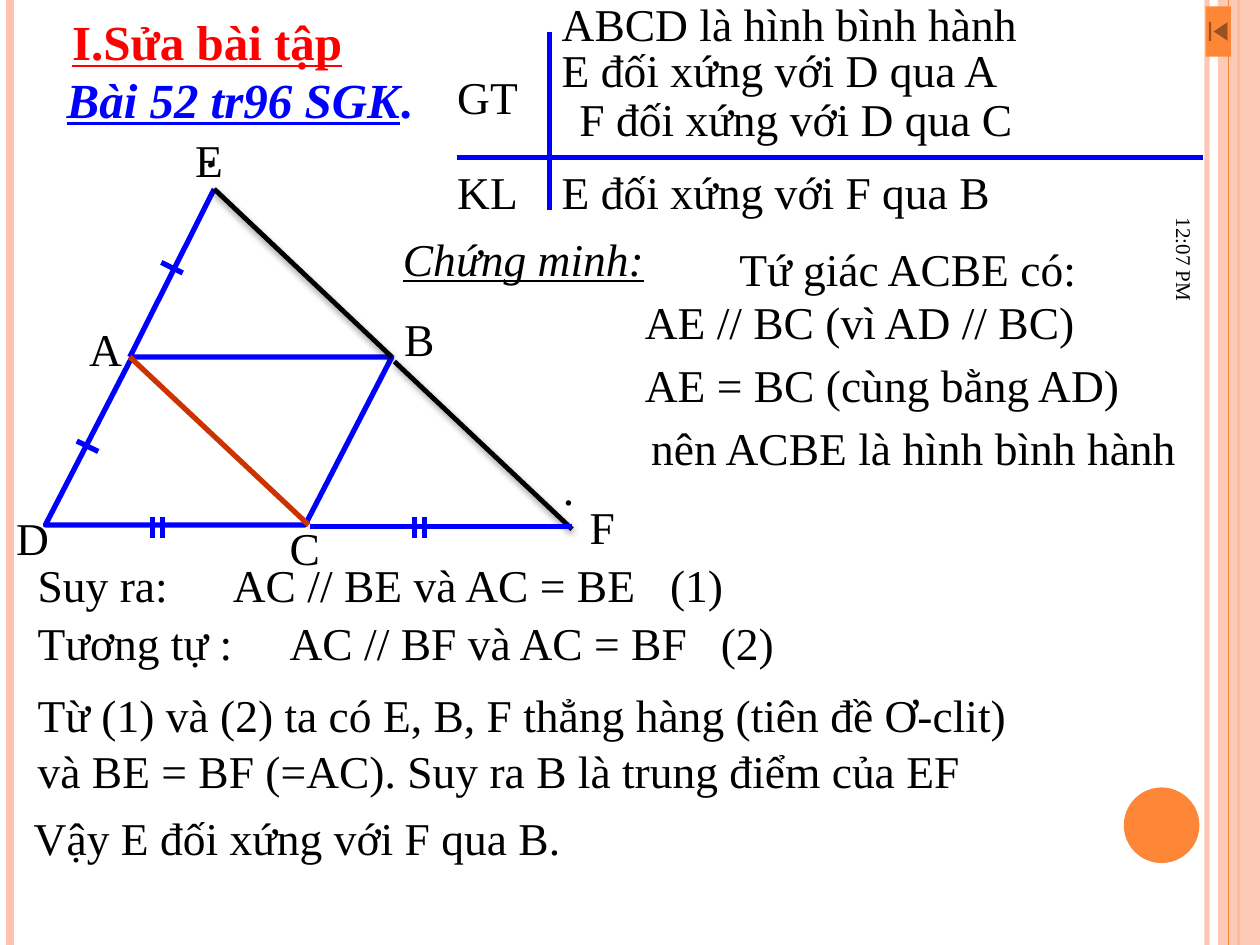
from dataclasses import dataclass

from lxml.etree import SubElement
from pptx import Presentation
from pptx.dml.color import RGBColor as Rgb
from pptx.enum.shapes import MSO_CONNECTOR as Connector, MSO_SHAPE as Shape
from pptx.enum.text import MSO_ANCHOR as Anchor, MSO_AUTO_SIZE as AutoSize, PP_ALIGN as Align
from pptx.oxml.ns import qn
from pptx.util import Pt


@dataclass(frozen=True)
class Theme:
    font: str = "Times New Roman"
    body: float = 26
    heading: float = 28
    clock: float = 12
    stroke: float = 3
    side: float = 2.75
    ink: str = "000000"
    blue: str = "0000FF"
    red: str = "FF0000"
    rust: str = "CC3300"
    orange: str = "FE8637"
    peach: str = "FEC3AE"


@dataclass(frozen=True)
class Box:
    left: float
    top: float
    width: float
    height: float


THEME = Theme()


def set_alpha(element, percent):
    color = next(element.iter(qn("a:srgbClr")))
    SubElement(color, qn("a:alpha"), val=str(percent * 1000))


def add_line(slide, box, start, end, color=THEME.blue, width=THEME.stroke, shadow=False):
    line = slide.shapes.add_connector(
        Connector.STRAIGHT,
        Pt(box.left + start[0]), Pt(box.top + start[1]),
        Pt(box.left + end[0]), Pt(box.top + end[1]))
    line.line.color.rgb = Rgb.from_string(color)
    line.line.width = Pt(width)
    effects = SubElement(line._element.spPr, qn("a:effectLst"))
    if shadow:
        outer = SubElement(effects, qn("a:outerShdw"), blurRad=str(Pt(4)),
                           dist=str(Pt(1.6)), dir="5400000", rotWithShape="0")
        SubElement(outer, qn("a:srgbClr"), val=THEME.ink)
        set_alpha(outer, 42)
    return line


def add_filled(slide, box, kind, x, y, width, height, color):
    shape = slide.shapes.add_shape(
        kind, Pt(box.left + x), Pt(box.top + y), Pt(width), Pt(height))
    shape.shadow.inherit = False
    shape.fill.solid()
    shape.fill.fore_color.rgb = Rgb.from_string(color)
    shape.line.fill.background()
    return shape


def style_font(font, size=THEME.body, color=THEME.ink, bold=False, italic=False, underline=False):
    font.name = THEME.font
    font.size = Pt(size)
    font.color.rgb = Rgb.from_string(color)
    font.bold, font.italic, font.underline = bold, italic, underline


def add_text(slide, box, x, y, width, text, height=38, spacing=None, tabs=(), **style):
    area = slide.shapes.add_textbox(
        Pt(box.left + x), Pt(box.top + y), Pt(width), Pt(height))
    frame = area.text_frame
    frame.word_wrap = True
    frame.auto_size = AutoSize.SHAPE_TO_FIT_TEXT
    frame.text = text
    for index, paragraph in enumerate(frame.paragraphs):
        style_font(paragraph.font, **style)
        if spacing:
            paragraph.line_spacing = spacing
        if index:
            paragraph.space_before = Pt(THEME.body / 2)
        if tabs:
            stops = SubElement(paragraph._p.get_or_add_pPr(), qn("a:tabLst"))
            stops.getparent().insert(0, stops)
            for stop in tabs:
                SubElement(stops, qn("a:tab"), pos=str(Pt(stop)), algn="l")
    return area


def draw_frame(slide, box):
    def rule(x, color, width):
        return add_line(slide, box, (x, 0), (x, box.height), color, width)

    set_alpha(rule(689.8, THEME.peach, 3)._element.spPr, 93)
    rule(5.8, THEME.peach, 4.5)
    rule(707.8, THEME.orange, 1.5)
    band = add_filled(slide, box, Shape.RECTANGLE, 696, 0, 24, box.height, THEME.peach)
    set_alpha(band._element.spPr, 87)
    rule(702, THEME.orange, 0.75)
    add_filled(slide, box, Shape.OVAL, 642.2, 450, 43.2, 43.2, THEME.orange)
    add_filled(slide, box, Shape.ACTION_BUTTON_BEGINNING, 689, 3.6, 14.4, 28.8, THEME.orange)
    clock = add_text(slide, box, 597.6, 85, 158.4, "12:07 PM", height=30, size=THEME.clock)
    clock.text_frame.auto_size = AutoSize.NONE
    clock.text_frame.vertical_anchor = Anchor.MIDDLE
    clock.text_frame.paragraphs[0].alignment = Align.RIGHT
    clock.rotation = 90


def draw_heading(slide, box):
    title = slide.shapes.title
    title.left, title.top = Pt(box.left + 3), Pt(box.top)
    title.width, title.height = Pt(190.8), Pt(41)
    frame = title.text_frame
    frame.text = "I.Sửa bài tập"
    frame.vertical_anchor = Anchor.TOP
    frame.auto_size = AutoSize.SHAPE_TO_FIT_TEXT
    frame.paragraphs[0].alignment = Align.LEFT
    style_font(frame.paragraphs[0].font, THEME.heading, THEME.red, bold=True, underline=True)

    exercise = add_text(slide, box, 0, 33, box.width, "Bài 52 tr96 SGK", height=41,
                        size=THEME.heading, color=THEME.blue, bold=True)
    paragraph = exercise.text_frame.paragraphs[0]
    paragraph.runs[0].font.italic = paragraph.runs[0].font.underline = True
    paragraph.add_run().text = "."


def draw_figure(slide, box):
    e, a, b, c, f = (122.4, 48), (74.2, 144), (223.9, 144), (176.4, 240), (326.9, 242.4)
    add_line(slide, box, (b[0] + 1.5, b[1] + 2.6), f, THEME.ink, THEME.side, shadow=True)
    add_line(slide, box, e, a)
    parallelogram = add_filled(slide, box, Shape.PARALLELOGRAM, 25.9, 144, 198, 96, THEME.blue)
    parallelogram.adjustments[0] = 0.516
    parallelogram.fill.background()
    parallelogram.line.color.rgb = Rgb.from_string(THEME.blue)
    parallelogram.line.width = Pt(THEME.stroke)
    add_line(slide, box, (177, 241), (f[0], 241))
    for x, y in ((43.9, 192), (92.2, 90)):
        add_line(slide, box, (x, y), (x + 12.2, y + 6))
    for x in (87.1, 92.9, 236.9, 242.6):
        add_line(slide, box, (x, 235.2), (x, 247.4))
    add_line(slide, box, a, c, THEME.rust)
    add_line(slide, box, e, b, THEME.ink, THEME.side, shadow=True)
    for letter, x, y in (
            ("E", 104.4, 12), (".", 110.2, 6.2), ("A", 43.9, 120), ("B", 223.9, 114.2),
            ("C", 158.4, 233.8), ("D", 2.2, 228), ("F", 329.8, 221.5), (".", 314.6, 199.2)):
        add_text(slide, box, x, y, 72, letter)


def draw_given(slide, box):
    add_line(slide, box, (7.2, 90), (433.4, 90))
    add_line(slide, box, (59.7, 18), (59.7, 120))
    for label, y in (("GT", 36), ("KL", 90)):
        add_text(slide, box, 0, y, 75, label)
    for statement, x, y in (
            ("ABCD là hình bình hành", 59.7, -5.8),
            ("E đối xứng với D qua A", 59.7, 20.2),
            ("F đối xứng với D qua C", 69.8, 48.2),
            ("E đối xứng với F qua B", 59.7, 90)):
        add_text(slide, box, x, y, 345, statement)


def draw_proof(slide, box):
    add_text(slide, box, 0, 0, 252, "Chứng minh:", italic=True, underline=True)
    add_text(slide, box, 192.2, 5.8, 294, "Tứ giác ACBE có:")
    steps = ((138.2, "AE // BC (vì AD // BC)"), (138.2, "AE = BC (cùng bằng AD)"),
             (141.8, "nên ACBE là hình bình hành"))
    for row, (x, step) in enumerate(steps):
        add_text(slide, box, x, 36 + 36 * row, 390, step)


def draw_conclusion(slide, box):
    add_text(slide, box, 0, 0, 594, "Suy ra:\tAC // BE và AC = BE\t(1)", tabs=(111.6, 361.4))
    add_text(slide, box, 0, 33.2, 234, "Tương tự :")
    add_text(slide, box, 144, 33.2, 408, "AC // BF và AC = BF\t(2)", tabs=(246.4,))
    add_text(slide, box, 0, 85.7, 702,
             "Từ (1) và (2) ta có E, B, F thẳng hàng (tiên đề Ơ-clit)\n"
             "và BE = BF (=AC). Suy ra B là trung điểm của EF", height=62, spacing=0.6)
    add_text(slide, box, -2.2, 153.4, 708, "Vậy E đối xứng với F qua B.", height=30, spacing=0.7)


def main():
    deck = Presentation()
    deck.slide_width, deck.slide_height = Pt(720), Pt(540)
    slide = deck.slides.add_slide(deck.slide_layouts[5])
    draw_frame(slide, Box(0, 0, 720, 540))
    draw_figure(slide, Box(0, 60, 402, 272))
    draw_given(slide, Box(254.2, 0, 434, 128))
    draw_proof(slide, Box(223.2, 128.2, 496, 146))
    draw_conclusion(slide, Box(14.4, 314.6, 706, 184))
    draw_heading(slide, Box(31, 3, 228, 74))
    deck.save("out.pptx")


if __name__ == "__main__":
    main()
